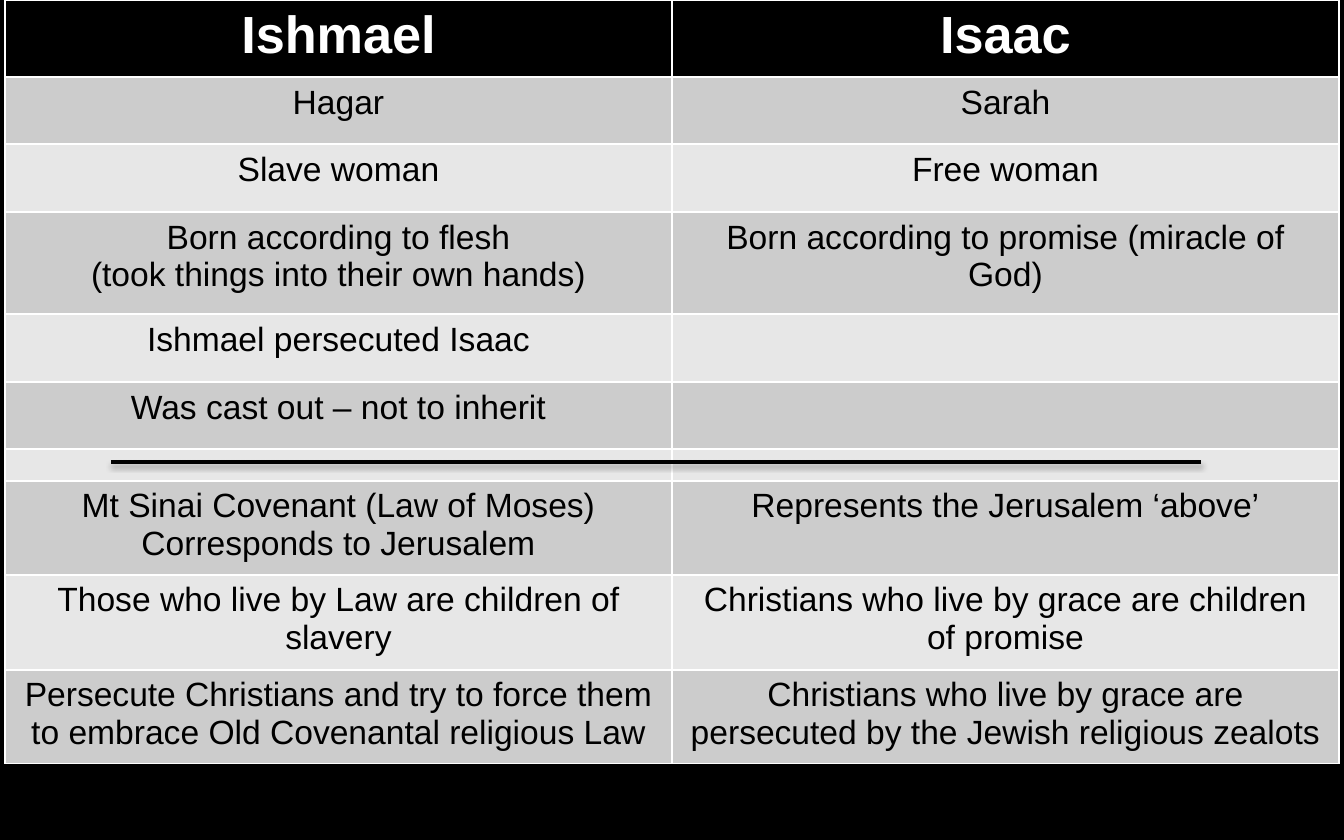
from lxml import etree
from pptx import Presentation
from pptx.dml.color import RGBColor
from pptx.enum.shapes import MSO_CONNECTOR
from pptx.enum.text import PP_ALIGN
from pptx.oxml import parse_xml
from pptx.util import Pt

PX = 914400 / 134.4
CENTER = PP_ALIGN.CENTER
STRAIGHT = MSO_CONNECTOR.STRAIGHT
HUES = {"black": "000000", "white": "FFFFFF", "dark": "CCCCCC", "light": "E7E7E7"}
HEAD = {"name": "Arial", "size": Pt(28), "bold": True}
BODY = {"name": "Arial", "size": Pt(18), "bold": False}

# Height in px, left text, right text
ROWS = [
    (77, "Ishmael", "Isaac"),
    (67, "Hagar", "Sarah"),
    (68, "Slave woman", "Free woman"),
    (102, "Born according to flesh\n(took things into their own hands)",
     "Born according to promise (miracle of God)"),
    (68, "Ishmael persecuted Isaac", ""),
    (67, "Was cast out – not to inherit", ""),
    (31, "", ""),
    (94, "Mt Sinai Covenant (Law of Moses)\nCorresponds to Jerusalem",
     "Represents the Jerusalem ‘above’"),
    (95, "Those who live by Law are children of slavery",
     "Christians who live by grace are children of promise"),
    (94, "Persecute Christians and try to force them to embrace "
     "Old Covenantal religious Law",
     "Christians who live by grace are persecuted by the Jewish religious zealots"),
]


def px(n):
    return round(n * PX)


def rgb(name):
    return RGBColor.from_string(HUES[name])


deck = Presentation()
deck.slide_width, deck.slide_height = px(1344), px(840)
slide = deck.slides.add_slide(deck.slide_layouts[6])
back = slide.background.fill
back.solid()
back.fore_color.rgb = rgb("black")

# Table of the two sons
high = sum(row[0] for row in ROWS)
grid = slide.shapes.add_table(len(ROWS), 2, px(5), 0, px(1334), px(high)).table
for col in grid.columns:
    col.width = px(667)

for i, (tall, *texts) in enumerate(ROWS):
    grid.rows[i].height = px(tall)
    fill = "black" if i == 0 else "dark" if i % 2 else "light"
    for j, text in enumerate(texts):
        cell = grid.cell(i, j)
        cell.fill.solid()
        cell.fill.fore_color.rgb = rgb(fill)
        cell.text = text
        for para in cell.text_frame.paragraphs:
            para.alignment = CENTER
            if not text:
                # A small end mark lets the empty row stay thin
                end = etree.SubElement(para._p, para._p.tag[:-1] + "endParaRPr")
                end.set("sz", "800")
            for run in para.runs:
                for key, value in (BODY if i else HEAD).items():
                    setattr(run.font, key, value)
                run.font.color.rgb = rgb("black" if i else "white")

# Rule between the story and its meaning
rule = slide.shapes.add_connector(STRAIGHT, px(111), px(462), px(1201), px(462))
rule.line.color.rgb = rgb("black")
rule.line.width = Pt(2)
rule._element.spPr.append(parse_xml(
    '<a:effectLst xmlns:a="http://schemas.openxmlformats.org/drawingml/2006/main">'
    '<a:outerShdw blurRad="40000" dist="20000" dir="5400000" rotWithShape="0">'
    f'<a:srgbClr val="{HUES["black"]}"><a:alpha val="38000"/></a:srgbClr>'
    '</a:outerShdw></a:effectLst>'))

deck.save("out.pptx")
